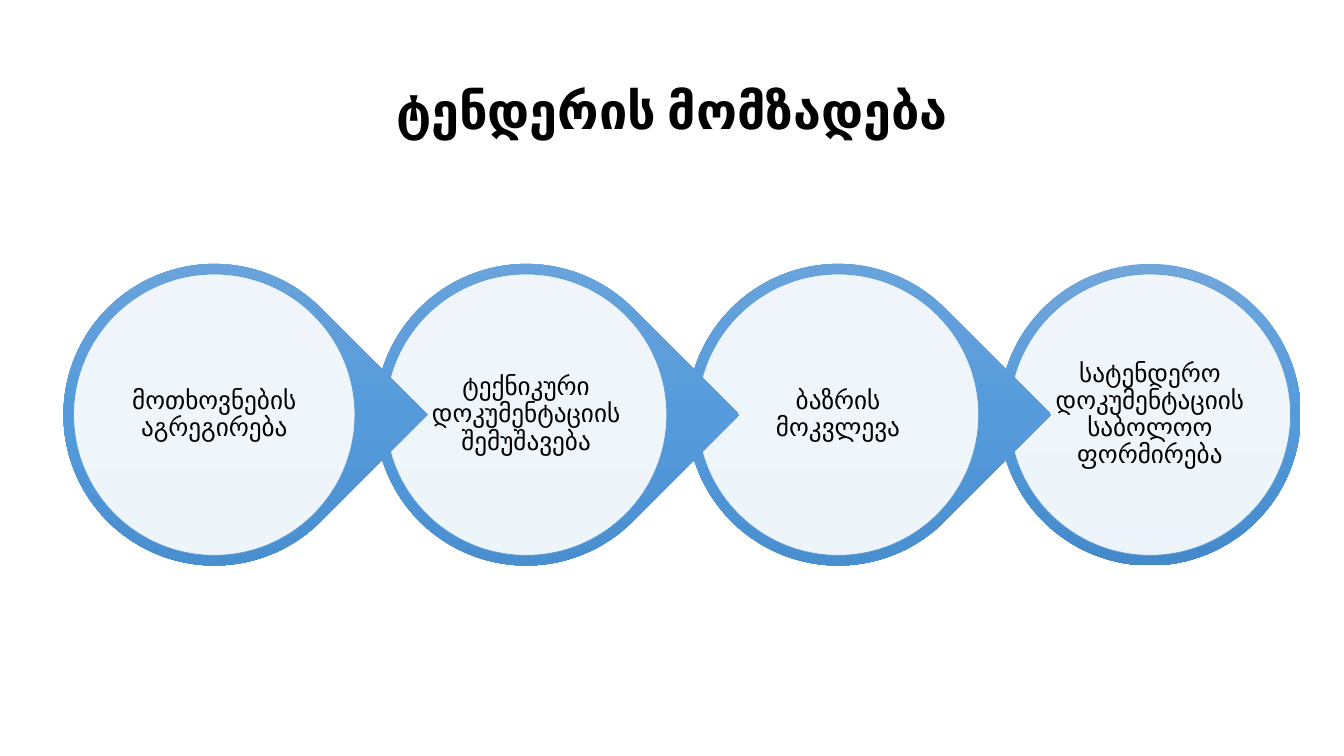
from dataclasses import dataclass

from lxml import etree
from pptx import Presentation
from pptx import util as u
from pptx.dml.color import RGBColor
from pptx.enum import shapes, text
from pptx.oxml import ns


@dataclass(frozen=True)
class Theme:
    font: str = "Calibri"
    title_size: int = 36
    label_size: int = 18
    ink: str = "000000"
    disc: str = "FFFFFF"
    disc_opacity: int = 90
    outline: str = "5B9BD5"
    gradient: tuple = ((0, "71A6DB"), (50, "559BDB"), (100, "448ACA"))


class SlideBuilder:
    def __init__(self, slide, theme):
        self.slide = slide
        self.theme = theme

    def format_text(self, frame, content, size, bold=False):
        frame.word_wrap = True
        frame.vertical_anchor = text.MSO_ANCHOR.MIDDLE
        paragraph = frame.paragraphs[0]
        paragraph.text = content
        paragraph.alignment = text.PP_ALIGN.CENTER
        paragraph.line_spacing = 0.9
        paragraph.font.name = self.theme.font
        paragraph.font.size = u.Pt(size)
        paragraph.font.bold = bold
        paragraph.font.color.rgb = RGBColor.from_string(self.theme.ink)

    def title(self, content, left, top, width, height):
        shape = self.slide.shapes.title
        shape.left, shape.top = u.Cm(left), u.Cm(top)
        shape.width, shape.height = u.Cm(width), u.Cm(height)
        self.format_text(shape.text_frame, content, self.theme.title_size, bold=True)

    def circle(self, kind, center_x, center_y, size):
        shape = self.slide.shapes.add_shape(
            kind, u.Cm(center_x - size / 2), u.Cm(center_y - size / 2),
            u.Cm(size), u.Cm(size))
        shape.shadow.inherit = False
        return shape

    def ring(self, center_x, center_y, size, pointed):
        """Gradient backing disc, with a tip to the right when pointed."""
        kinds = shapes.MSO_SHAPE
        shape = self.circle(kinds.TEAR if pointed else kinds.OVAL,
                            center_x, center_y, size)
        if pointed:
            shape.adjustments[0] = 1
            shape.rotation = 45
        shape.line.fill.background()
        self.vertical_gradient(shape)

    def vertical_gradient(self, shape):
        shape.fill.gradient()
        fill = shape.element.spPr.find(ns.qn("a:gradFill"))
        fill.set("rotWithShape", "0")
        for child in list(fill):
            fill.remove(child)
        stops = etree.SubElement(fill, ns.qn("a:gsLst"))
        for position, color in self.theme.gradient:
            stop = etree.SubElement(stops, ns.qn("a:gs"), pos=str(position * 1000))
            etree.SubElement(stop, ns.qn("a:srgbClr"), val=color)
        etree.SubElement(fill, ns.qn("a:lin"), ang="5400000", scaled="0")

    def disc(self, center_x, center_y, size):
        shape = self.circle(shapes.MSO_SHAPE.OVAL, center_x, center_y, size)
        shape.fill.solid()
        shape.fill.fore_color.rgb = RGBColor.from_string(self.theme.disc)
        color = shape.element.spPr.find(ns.qn("a:solidFill"))[0]
        etree.SubElement(color, ns.qn("a:alpha"),
                         val=str(self.theme.disc_opacity * 1000))
        shape.line.color.rgb = RGBColor.from_string(self.theme.outline)
        shape.line.width = u.Pt(0.5)

    def label(self, content, center_x, center_y, size):
        box = self.slide.shapes.add_textbox(
            u.Cm(center_x - size / 2), u.Cm(center_y - size / 2),
            u.Cm(size), u.Cm(size))
        frame = box.text_frame
        frame.margin_left = frame.margin_right = u.Cm(0.08)
        frame.margin_top = frame.margin_bottom = u.Cm(0.08)
        self.format_text(frame, content, self.theme.label_size)


def main():
    presentation = Presentation()
    presentation.slide_width = u.Cm(33.87)
    presentation.slide_height = u.Cm(19.05)
    title_only = presentation.slide_layouts[5]
    builder = SlideBuilder(presentation.slides.add_slide(title_only), Theme())
    builder.title("ტენდერის მომზადება", 2.33, 1.01, 29.21, 3.68)

    steps = [
        "მოთხოვნების აგრეგირება",
        "ტექნიკური დოკუმენტაციის შემუშავება",
        "ბაზრის მოკვლევა",
        "სატენდერო დოკუმენტაციის საბოლოო ფორმირება",
    ]
    first_center, spacing, center_y = 5.4, 7.86, 10.45
    last = len(steps) - 1
    # Right to left, so that each tip overlaps the next circle.
    for index in range(last, -1, -1):
        center_x = first_center + index * spacing
        builder.ring(center_x, center_y, 7.6, pointed=index < last)
        builder.disc(center_x, center_y, 7.09)
        builder.label(steps[index], center_x, center_y, 5.07)

    presentation.save("out.pptx")


if __name__ == "__main__":
    main()
